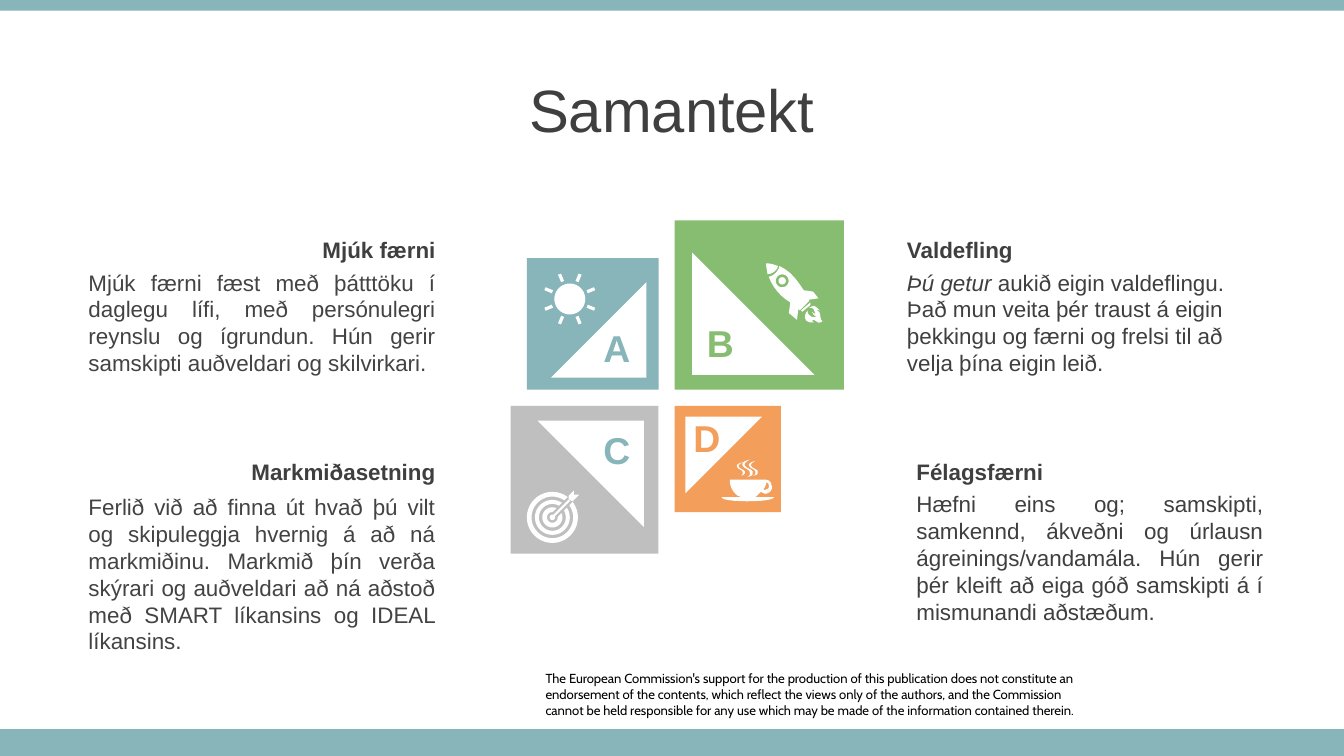
import math
from dataclasses import dataclass

from pptx import Presentation
from pptx import util as u
from pptx.dml.color import RGBColor
from pptx.enum import shapes, text

SHAPE = shapes.MSO_SHAPE
ALIGN = text.PP_ALIGN


@dataclass(frozen=True)
class Theme:
    teal: str = "87B5BA"
    green: str = "86BD70"
    orange: str = "F39E5A"
    gray: str = "BFBFBF"
    white: str = "FFFFFF"
    black: str = "000000"
    dark: str = "3F3F3F"
    soft: str = "434343"
    font: str = "Arial"
    small_font: str = "Cabin"
    title: int = 32
    letter: int = 20
    body: int = 12
    small: int = 7


T = Theme()


def paint(shape, color):
    shape.shadow.inherit = False
    shape.fill.solid()
    shape.fill.fore_color.rgb = RGBColor.from_string(color)
    shape.line.fill.background()


def add_block(slide, kind, box, color, rotation=0):
    block = slide.shapes.add_shape(kind, *map(u.Inches, box))
    block.rotation = rotation
    paint(block, color)


def style(paragraph, size, color, font=T.font, bold=None, align=ALIGN.LEFT):
    paragraph.alignment = align
    paragraph.font.name = font
    paragraph.font.size = u.Pt(size)
    paragraph.font.bold = bold
    paragraph.font.color.rgb = RGBColor.from_string(color)


def add_text(slide, box, paragraphs, inset=(0.1, 0.05), **look):
    """Each paragraph is a list of (words, italic) runs."""
    frame = slide.shapes.add_textbox(*map(u.Inches, box)).text_frame
    frame.word_wrap = True
    frame.margin_left = frame.margin_right = u.Inches(inset[0])
    frame.margin_top = frame.margin_bottom = u.Inches(inset[1])
    for i, runs in enumerate(paragraphs):
        paragraph = frame.add_paragraph() if i else frame.paragraphs[0]
        for words, italic in runs:
            run = paragraph.add_run()
            run.text = words
            if italic:
                run.font.italic = True
        style(paragraph, **look)


# Icon outlines, in hundredths of an inch: pairs are corners, sixes are curves
def flatten(contour, steps=6):
    points = [contour[0]]
    for part in contour[1:]:
        if len(part) == 2:
            points.append(part)
            continue
        nodes = [points[-1], part[:2], part[2:4], part[4:]]
        for t in (i / steps for i in range(1, steps + 1)):
            weights = ((1 - t) ** 3, 3 * t * (1 - t) ** 2, 3 * t * t * (1 - t), t ** 3)
            points.append(tuple(sum(w * n[k] for w, n in zip(weights, nodes))
                                for k in (0, 1)))
    return points


def circle(cx, cy, r, sides=40):
    angles = (2 * math.pi * i / sides for i in range(sides))
    return [(cx + r * math.cos(a), cy + r * math.sin(a)) for a in angles]


def ray(cx, cy, inner, outer, half, degrees):
    c, s = math.cos(math.radians(degrees)), math.sin(math.radians(degrees))
    corners = ((inner, -half), (outer, -half), (outer, half), (inner, half))
    return [(cx + x * c - y * s, cy + x * s + y * c) for x, y in corners]


def moved(contour, dx, dy, scale):
    return [tuple(v * scale + (dy if k % 2 else dx) for k, v in enumerate(part))
            for part in contour]


def add_outline(slide, left, top, contours, color=T.white):
    builder = None
    for contour in contours:
        points = [(u.Inches(left + x / 100), u.Inches(top + y / 100))
                  for x, y in flatten(contour)]
        if builder is None:
            builder = slide.shapes.build_freeform(*points[0], scale=1.0)
        else:
            builder.move_to(*points[0])
        builder.add_line_segments(points[1:], close=True)
    paint(builder.convert_to_shape(), color)


def add_sun(slide, left, top):
    rays = [ray(19, 19.5, 14, 20, 1.2, 22.5 + 45 * i) for i in range(8)]
    add_outline(slide, left, top, [circle(19, 19.5, 11.5)] + rays)


def add_rocket(slide, left, top):
    nose = [(0, 0), (4, 0, 6, 1, 9, 2), (8, 5, 5, 8, 1, 8), (1, 6, 0, 3, 0, 0)]
    hull = [(2, 10), (6, 9, 9, 6, 10, 2), (19, 6, 24, 14, 28, 20), (35, 21), (39, 26),
            (32, 27), (32, 28), (25, 35), (24, 34), (23, 42), (17, 37), (18, 29),
            (11, 25, 5, 18, 2, 10)]
    nozzle = [(26, 35), (33, 29), (33, 31), (27, 36)]
    flame = [(31, 35), (30, 37, 33, 41, 38, 40), (35, 39, 35, 37, 34, 36),
             (35, 36, 35, 38, 37, 37), (35, 36, 37, 33, 32, 33), (37, 30, 37, 33, 40, 35),
             (39, 35, 37, 34, 38, 35), (42, 37, 39, 41, 42, 43), (39, 46, 37, 42, 35, 42),
             (34, 43, 34, 43, 36, 44), (27, 45, 28, 38, 31, 35)]
    window = [circle(12, 13, 4.8), circle(12, 13, 2.7)]
    add_outline(slide, left, top, [nose, hull, *window, nozzle, flame])


def add_target(slide, left, top):
    rings = [circle(19, 20, r) for r in (19, 15.5, 13, 10, 7.5, 4, 2)]
    add_outline(slide, left, top, rings)
    add_outline(slide, left, top, [ray(19, 20, 2.5, 21, 2.5, -45)], T.gray)
    shaft = ray(19, 20, 0, 18, 0.8, -45)
    feathers = [(31, 6), (31, 4), (35, 0), (35, 3), (39, 3), (34, 8), (32, 7)]
    add_outline(slide, left, top, [shaft])
    add_outline(slide, left, top, [feathers])


def add_cup(slide, left, top):
    cup = [(33, 15), (35, 15, 37, 17, 37, 19), (38, 21, 37, 24, 34, 25),
           (33, 26, 31, 25, 29, 24), (28, 25, 27, 26, 26, 27), (26, 27, 25, 28, 24, 28),
           (39, 28), (38, 30, 30, 31, 19, 31), (9, 31, 0, 30, 0, 28), (15, 28),
           (14, 28, 13, 27, 12, 27), (8, 24, 6, 20, 6, 15)]
    handle = [(33, 17), (33, 19, 32, 21, 31, 22), (32, 23, 33, 23, 33, 22),
              (35, 22, 35, 21, 35, 19), (35, 18, 34, 17, 33, 17)]
    steam = [(6, 0), (4, 1, 2, 2, 2, 4), (3, 7, 9, 7, 8, 10), (8, 12, 7, 12, 4, 13),
             (6, 12, 6, 11, 6, 10), (6, 7, 2, 7, 1, 5), (-1, 3, 1, 1, 6, 0)]
    plumes = [moved(steam, *place) for place in ((11, 2, 0.77), (15, 0, 1), (20, 1, 0.85))]
    add_outline(slide, left, top, [cup, handle, *plumes])


# Regions of the slide
def add_frame(slide, width, height):
    add_block(slide, SHAPE.RECTANGLE, (0, height - 0.2, width, 0.2), T.teal)
    add_block(slide, SHAPE.RECTANGLE, (0, 0, width, 0.08), T.teal)
    disclaimer = (
        "The European Commission's support for the production of this publication does not "
        "constitute an endorsement of the contents, which reflect the views only of the "
        "authors, and the Commission",
        "cannot be held responsible for any use which may be made of the information "
        "contained therein.")
    add_text(slide, (4.06, 4.99, 4.17, 0.35), [[(line, False)] for line in disclaimer],
             inset=(0, 0), size=T.small, color=T.black, font=T.small_font)


def add_title(slide, box, words):
    title = slide.shapes.title
    title.left, title.top, title.width, title.height = map(u.Inches, box)
    title.text_frame.text = words
    title.text_frame.vertical_anchor = text.MSO_ANCHOR.MIDDLE
    style(title.text_frame.paragraphs[0], T.title, T.dark, align=ALIGN.CENTER)


def add_tile(slide, left, top, size, color, corner, letter):
    dx, dy, side, rotation = corner
    add_block(slide, SHAPE.RECTANGLE, (left, top, size, size), color)
    add_block(slide, SHAPE.RIGHT_TRIANGLE, (left + dx, top + dy, side, side), T.white, rotation)
    name, x, y, letter_color = letter
    add_text(slide, (left + x, top + y, 0.44, 0.44), [[(name, False)]], size=T.letter,
             color=letter_color, bold=True, align=ALIGN.CENTER)


def add_tiles(slide, cx, cy, gap):
    """Four squares growing outwards from a cross-shaped gap centred on cx, cy."""
    tiles = (
        (-1, -1, 0.98, T.teal, (0.18, 0.18, 0.71, 270), ("A", 0.45, 0.45, T.teal)),
        (1, -1, 1.26, T.green, (0.13, 0.24, 0.91, 0), ("B", 0.12, 0.69, T.green)),
        (1, 1, 0.79, T.orange, (0.08, 0.08, 0.57, 90), ("D", 0.02, 0.02, T.orange)),
        (-1, 1, 1.1, T.gray, (0.2, 0.11, 0.79, 180), ("C", 0.57, 0.11, T.teal)))
    for across, down, size, *parts in tiles:
        left = cx + gap / 2 if across > 0 else cx - gap / 2 - size
        top = cy + gap / 2 if down > 0 else cy - gap / 2 - size
        add_tile(slide, left, top, size, *parts)


def add_topic(slide, left, top, drop, heading, paragraphs, heading_align, body_align, color):
    height = 0.91 if top < 3 else 1.31
    add_text(slide, (left, top + drop, 2.78, height), paragraphs, size=T.body, color=color,
             align=body_align)
    add_text(slide, (left, top, 2.78, 0.3), [[(heading, False)]], size=T.body,
             color=T.dark, bold=True, align=heading_align)


def main():
    deck = Presentation()
    width = 10
    height = width * 9 / 16
    deck.slide_width, deck.slide_height = u.Inches(width), u.Inches(height)
    slide = deck.slides.add_slide(deck.slide_layouts[5])

    add_frame(slide, width, height)
    add_title(slide, (0, 0.49, width, 0.63), "Samantekt")
    add_tiles(slide, 4.96, 2.96, 0.12)

    add_topic(slide, 0.56, 1.71, 0.24, "Mjúk færni", [[(
        "Mjúk færni fæst með þátttöku í daglegu lífi, með persónulegri reynslu og ígrundun. "
        "Hún gerir samskipti auðveldari og skilvirkari.", False)]],
        ALIGN.RIGHT, ALIGN.JUSTIFY, T.soft)
    add_topic(slide, 0.56, 3.36, 0.26, "Markmiðasetning", [[(
        "Ferlið við að finna út hvað þú vilt og skipuleggja hvernig á að ná markmiðinu. "
        "Markmið þín verða skýrari og auðveldari að ná aðstoð með SMART líkansins og IDEAL "
        "líkansins.", False)]], ALIGN.RIGHT, ALIGN.JUSTIFY, T.soft)
    add_topic(slide, 6.65, 1.71, 0.24, "Valdefling", [
        [("Þú getur ", True), ("aukið eigin valdeflingu.", False)],
        [("Það mun veita þér traust á eigin þekkingu og færni og frelsi til að velja þína "
          "eigin leið.", False)]], ALIGN.LEFT, ALIGN.LEFT, T.dark)
    add_topic(slide, 6.72, 3.36, 0.24, "Félagsfærni", [[(
        "Hæfni eins og; samskipti, samkennd, ákveðni og úrlausn ágreinings/vandamála. Hún "
        "gerir þér kleift að eiga góð samskipti á í mismunandi aðstæðum.", False)]],
        ALIGN.LEFT, ALIGN.JUSTIFY, T.dark)

    add_rocket(slide, 5.7, 1.96)
    add_cup(slide, 5.37, 3.42)
    add_target(slide, 3.92, 3.65)
    add_sun(slide, 4.05, 2.03)
    deck.save("out.pptx")


if __name__ == "__main__":
    main()
